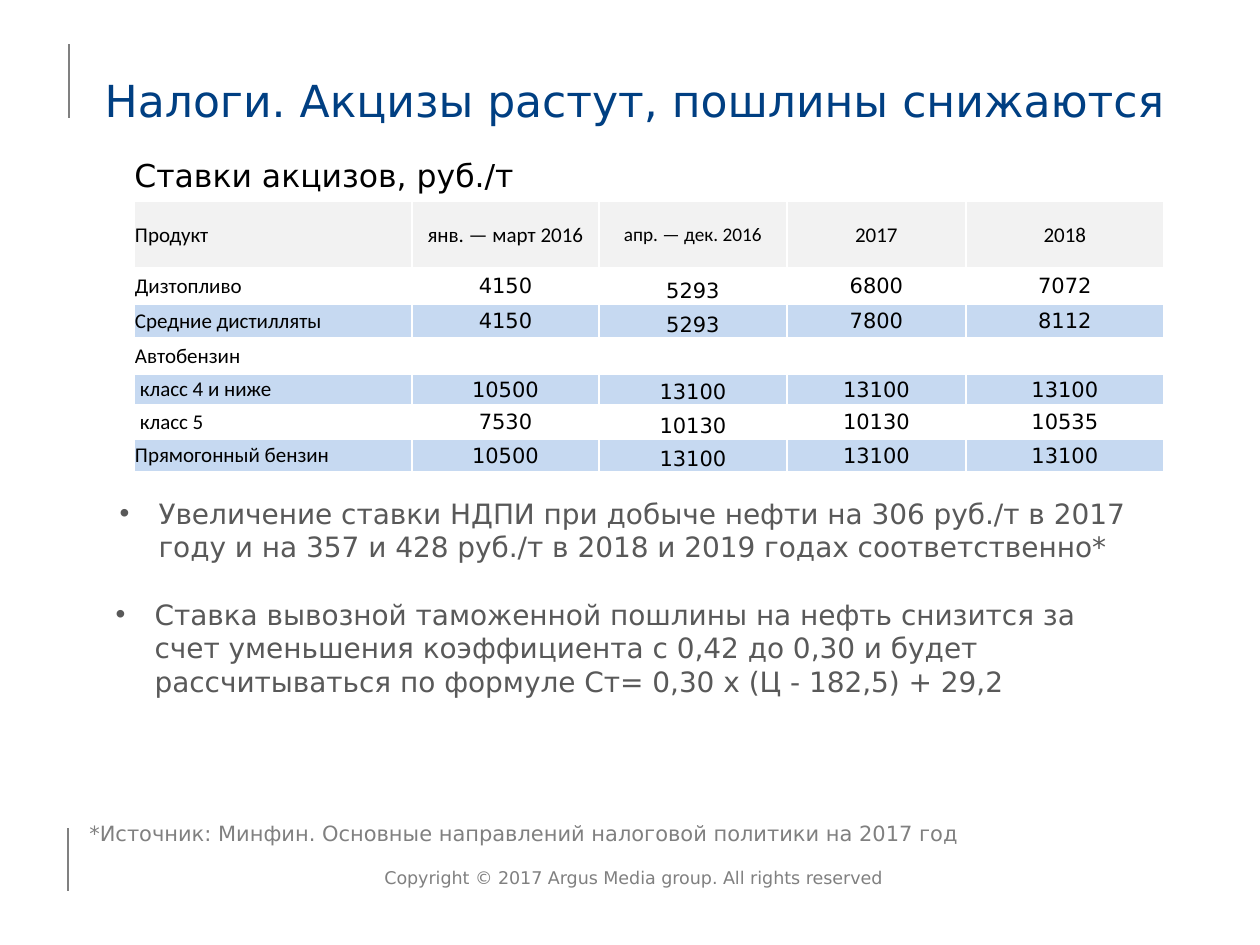
from lxml.etree import SubElement
from pptx import Presentation
from pptx.dml.color import RGBColor
from pptx.enum.shapes import MSO_CONNECTOR as CONN
from pptx.enum.text import MSO_ANCHOR as ANCHOR, MSO_AUTO_SIZE as FIT, PP_ALIGN as ALIGN
from pptx.oxml.ns import qn
from pptx.util import Emu, Pt

COLORS = {"title": "003F82", "text": "000000", "body": "595959", "muted": "808080",
          "header": "F2F2F2", "band": "C6D9F1", "plain": "FFFFFF"}
SANS, CELL_FONT = "DejaVu Sans", "Calibri"

COLUMNS = [278, 187, 188, 179, 198]
ROWS = [67, 36, 34, 36, 31, 34, 33]
RATES = [
    ["Продукт", "янв. — март 2016", "апр. — дек. 2016", "2017", "2018"],
    ["Дизтопливо", "4150", "5293", "6800", "7072"],
    ["Средние дистилляты", "4150", "5293", "7800", "8112"],
    ["Автобензин", "", "", "", ""],
    ["класс 4 и ниже", "10500", "13100", "13100", "13100"],
    ["класс 5", "7530", "10130", "10130", "10535"],
    ["Прямогонный бензин", "10500", "13100", "13100", "13100"],
]
BULLETS = [
    ("Увеличение ставки НДПИ при добыче нефти на 306 руб./т в 2017 году "
     "и на 357 и 428 руб./т в 2018 и 2019 годах соответственно*", (107, 490, 1057, 80)),
    ("Ставка вывозной таможенной пошлины на нефть снизится за счет уменьшения "
     "коэффициента с 0,42 до 0,30 и будет рассчитываться по формуле "
     "Ст= 0,30 х (Ц - 182,5) + 29,2", (103, 591, 1040, 115)),
]


def px(n):
    """Turn pixels into EMU."""
    return Emu(round(n * 914400 / 126))


def rgb(name):
    """Look up a palette colour."""
    return RGBColor.from_string(COLORS[name])


def place(sp, box):
    """Move a shape to a box given in pixels."""
    sp.left, sp.top, sp.width, sp.height = map(px, box)


def set_margins(target, left, top, right, bottom):
    """Set the inner margins of a cell or text frame in pixels."""
    target.margin_left, target.margin_top = px(left), px(top)
    target.margin_right, target.margin_bottom = px(right), px(bottom)


def write(tf, text, size=12, color="text", font=SANS, align=ALIGN.LEFT):
    """Write one formatted paragraph and return it."""
    p = tf.paragraphs[0]
    p.alignment, p.space_before = align, Pt(0)
    if not text:
        SubElement(p._p, qn("a:endParaRPr"), sz=str(size * 100))
        return p
    r = p.add_run()
    r.text = text
    r.font.size, r.font.name = Pt(size), font
    r.font.color.rgb = rgb(color)
    return p


def add_text(s, text, box, wrap=True, **fmt):
    """Add a text box."""
    tf = s.shapes.add_textbox(*map(px, box)).text_frame
    tf.word_wrap = wrap
    write(tf, text, **fmt)


def add_rule(s, x, top, bottom):
    """Add a thin vertical margin line."""
    line = s.shapes.add_connector(CONN.STRAIGHT, px(x), px(bottom), px(x), px(top))
    line.line.color.rgb = rgb("muted")
    line.line.width = Pt(0.75)
    SubElement(line._element.spPr, qn("a:effectLst"))


def add_title(s, text, box):
    """Fill the title placeholder."""
    sp = s.shapes.title
    place(sp, box)
    tf = sp.text_frame
    tf.auto_size, tf.vertical_anchor = FIT.NONE, ANCHOR.BOTTOM
    set_margins(tf, 0, 0, 0, 0)
    write(tf, text, size=25.2, color="title", align=ALIGN.CENTER)


def add_bullet(sp, text, box):
    """Fill a body placeholder with one bulleted paragraph."""
    place(sp, box)
    tf = sp.text_frame
    tf.auto_size, tf.vertical_anchor = FIT.NONE, ANCHOR.TOP
    pPr = write(tf, text, size=16, color="body")._p.get_or_add_pPr()
    pPr.set("marL", str(px(39)))
    pPr.set("indent", str(-px(39)))
    SubElement(pPr, qn("a:buChar"), char="•")


def add_borders(cell):
    """Draw white borders around a cell."""
    tcPr = cell._tc.get_or_add_tcPr()
    for i, side in enumerate(("lnL", "lnR", "lnT", "lnB")):
        ln = tcPr.makeelement(qn("a:" + side), {"w": str(Pt(1))})
        fill = SubElement(ln, qn("a:solidFill"))
        SubElement(fill, qn("a:srgbClr"), val=COLORS["plain"])
        tcPr.insert(i, ln)


def format_cell(cell, text, row, col):
    """Fill one cell by its row and column."""
    head, label = row == 0, col == 0
    indent = 6 if text.startswith("класс") else 1
    set_margins(cell, indent, 1, 1, 0)
    cell.vertical_anchor = ANCHOR.BOTTOM if col == 2 and not head else ANCHOR.MIDDLE
    cell.fill.solid()
    cell.fill.fore_color.rgb = rgb("header" if head else "plain" if row % 2 else "band")
    add_borders(cell)
    write(cell.text_frame, text, size=11 if head and col == 2 else 12,
          font=CELL_FONT if head or label else SANS,
          align=ALIGN.LEFT if label else ALIGN.CENTER)


def add_rates(s, left, top):
    """Add the table of excise rates."""
    tbl = s.shapes.add_table(len(ROWS), len(COLUMNS), px(left), px(top),
                             px(sum(COLUMNS)), px(sum(ROWS))).table
    tbl.first_row = tbl.horz_banding = False
    for column, width in zip(tbl.columns, COLUMNS):
        column.width = px(width)
    for row, height in zip(tbl.rows, ROWS):
        row.height = px(height)
    for i, values in enumerate(RATES):
        for j, text in enumerate(values):
            format_cell(tbl.cell(i, j), text, i, j)


def main():
    """Build the slide and save it."""
    prs = Presentation()
    prs.slide_width, prs.slide_height = px(1260), px(945)
    s = prs.slides.add_slide(prs.slide_layouts.get_by_name("Two Content"))
    add_rule(s, 69, 44, 118)
    add_rule(s, 68, 828, 891)
    add_title(s, "Налоги. Акцизы растут, пошлины снижаются", (84, 42, 1102, 84))
    add_text(s, "Ставки акцизов, руб./т", (122, 150, 408, 50), wrap=False, size=18)
    add_rates(s, 134, 201)
    for idx, (text, box) in enumerate(BULLETS, 1):
        add_bullet(s.placeholders[idx], text, box)
    add_text(s, "*Источник: Минфин. Основные направлений налоговой политики на 2017 год",
             (77, 814, 905, 38), wrap=False, color="muted")
    add_text(s, "Copyright © 2017 Argus Media group. All rights reserved",
             (372, 861, 630, 34), size=10, color="muted")
    prs.save("out.pptx")


if __name__ == "__main__":
    main()
